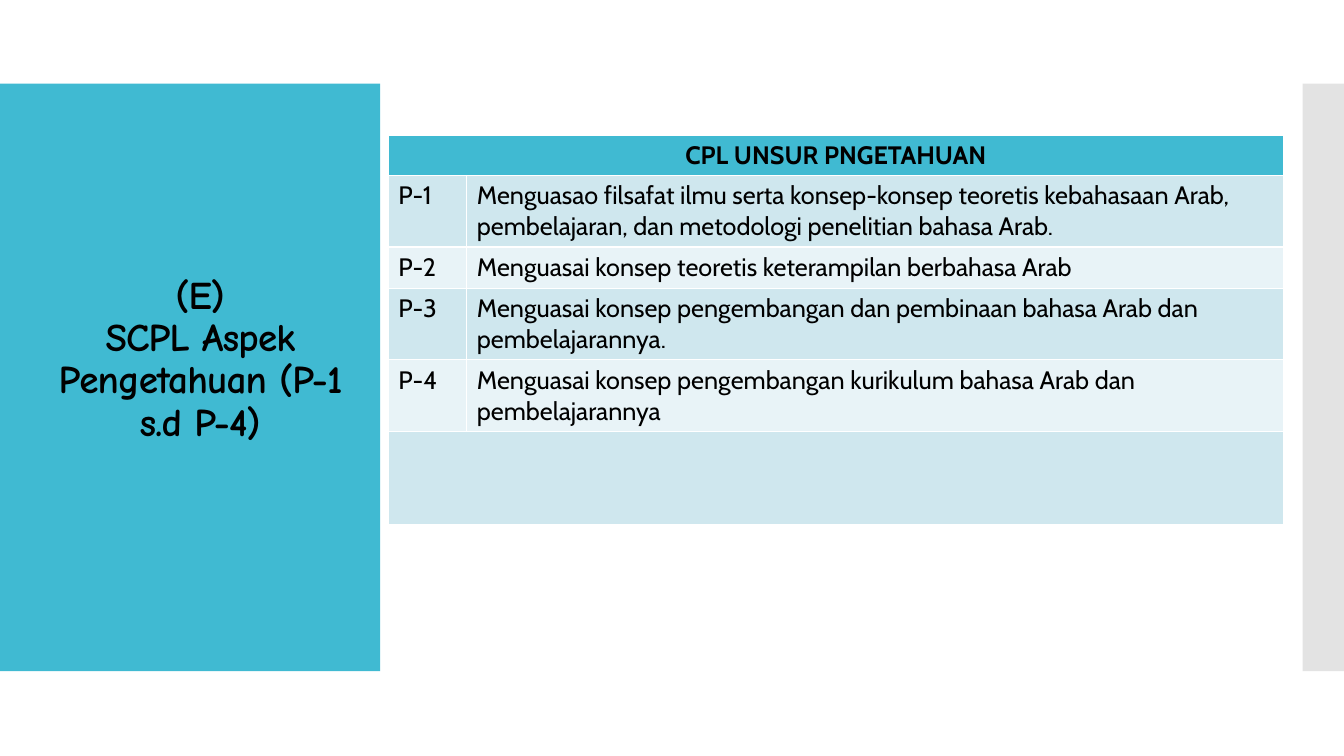
"""Slide listing the learning outcomes for the knowledge aspect (P-1 to P-4)."""
from lxml import etree
from pptx import Presentation, util as u
from pptx.dml.color import RGBColor
from pptx.enum import shapes, text
from pptx.oxml.ns import qn

COLORS = {"teal": "40BAD2", "grey": "C8C8C8", "dark_band": "CFE7EE",
          "light_band": "E8F3F7", "ink": "000000"}
OUTCOMES = [
    "Menguasao filsafat ilmu serta konsep-konsep teoretis kebahasaan Arab, "
    "pembelajaran, dan metodologi penelitian bahasa Arab.",
    "Menguasai konsep teoretis keterampilan berbahasa Arab",
    "Menguasai konsep pengembangan dan pembinaan bahasa Arab dan pembelajarannya.",
    "Menguasai konsep pengembangan kurikulum bahasa Arab dan pembelajarannya",
]
COLUMN_WIDTHS = [0.78, 8.1]
ROW_HEIGHTS = [0.4, 0.71, 0.41, 0.71, 0.71, 0.92]


def paint(fill, color):
    fill.solid()
    fill.fore_color.rgb = RGBColor.from_string(COLORS[color])


def style_text(paragraph, font_name, size, bold):
    for run in paragraph.runs:
        run.font.name = font_name
        run.font.size = u.Pt(size)
        run.font.bold = bold
        run.font.color.rgb = RGBColor.from_string(COLORS["ink"])


deck = Presentation()
deck.slide_width, deck.slide_height = u.Inches(13.33), u.Inches(7.5)
slide = deck.slides.add_slide(deck.slide_layouts[6])

for left, width, color in [(0, 3.77, "teal"), (12.92, 0.41, "grey")]:
    panel = slide.shapes.add_shape(
        shapes.MSO_SHAPE.RECTANGLE, u.Inches(left), u.Inches(0.83),
        u.Inches(width), u.Inches(5.83))
    panel.shadow.inherit = False
    panel.line.fill.background()
    paint(panel.fill, color)
    if color == "grey":
        tint = panel.fill._xPr.find(".//" + qn("a:srgbClr"))
        etree.SubElement(tint, qn("a:alpha"), val="50000")

heading = slide.shapes.add_textbox(
    u.Inches(0.3), u.Inches(1.19), u.Inches(3.37), u.Inches(4.76)).text_frame
heading.word_wrap = True
heading.vertical_anchor = text.MSO_ANCHOR.MIDDLE
heading_line = heading.paragraphs[0]
heading_line.text = "(E)\vSCPL Aspek Pengetahuan (P-1 s.d P-4)"
heading_line.alignment = text.PP_ALIGN.CENTER
heading_line.line_spacing = 0.9
style_text(heading_line, "Comic Neue", 28, True)
for run in heading_line.runs:
    run.font._element.set("spc", "-60")

outcomes = slide.shapes.add_table(
    len(ROW_HEIGHTS), len(COLUMN_WIDTHS), u.Inches(3.85), u.Inches(1.34),
    u.Inches(sum(COLUMN_WIDTHS)), u.Inches(sum(ROW_HEIGHTS))).table
for column, width in zip(outcomes.columns, COLUMN_WIDTHS):
    column.width = u.Inches(width)

entries = [("CPL UNSUR PNGETAHUAN", "")]
entries += [(f"P-{number}", outcome) for number, outcome in enumerate(OUTCOMES, 1)]
entries += [("", "")]
for index, (height, entry) in enumerate(zip(ROW_HEIGHTS, entries)):
    outcomes.rows[index].height = u.Inches(height)
    band = "teal" if index == 0 else "dark_band" if index % 2 else "light_band"
    for cell, wording in zip(outcomes.rows[index].cells, entry):
        paint(cell.fill, band)
        cell.text_frame.text = wording
        style_text(cell.text_frame.paragraphs[0], "Cabin", 18, index == 0)

for index in (0, len(ROW_HEIGHTS) - 1):
    outcomes.cell(index, 0).merge(outcomes.cell(index, 1))
outcomes.cell(0, 0).text_frame.paragraphs[0].alignment = text.PP_ALIGN.CENTER

deck.save("out.pptx")
